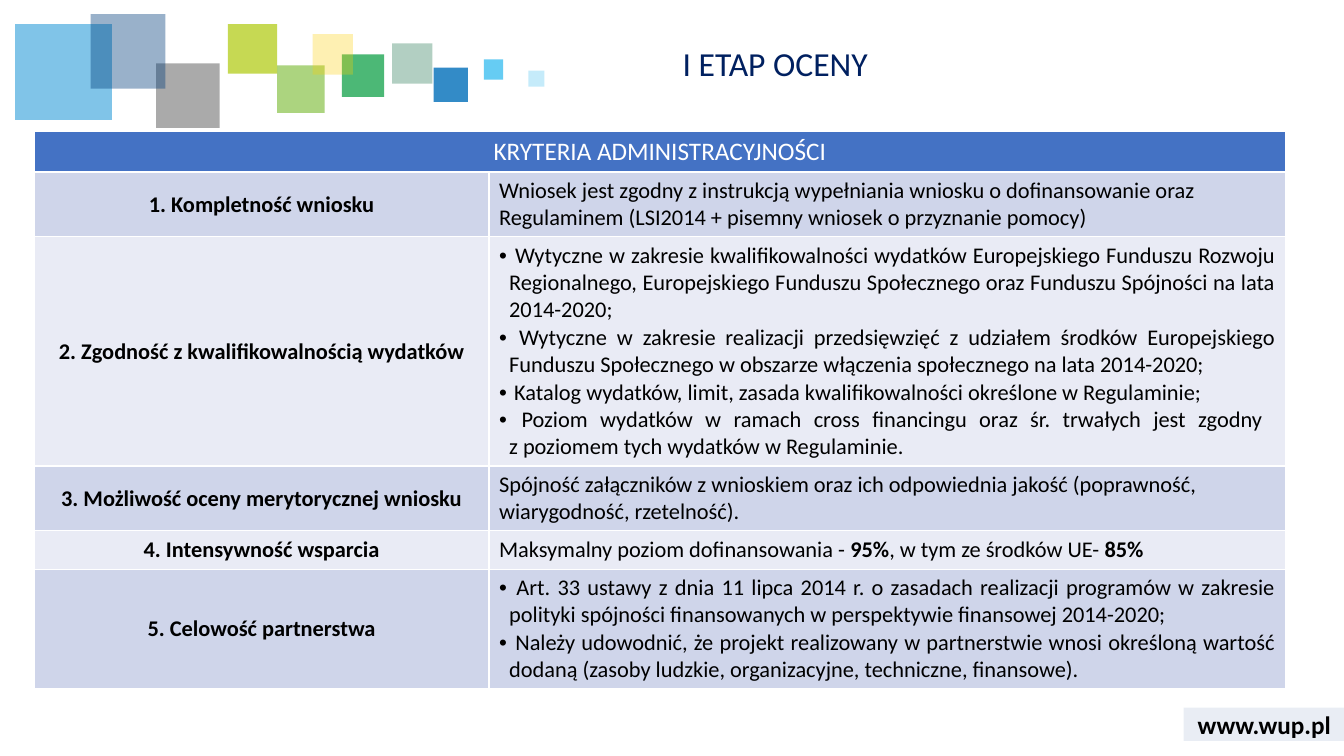
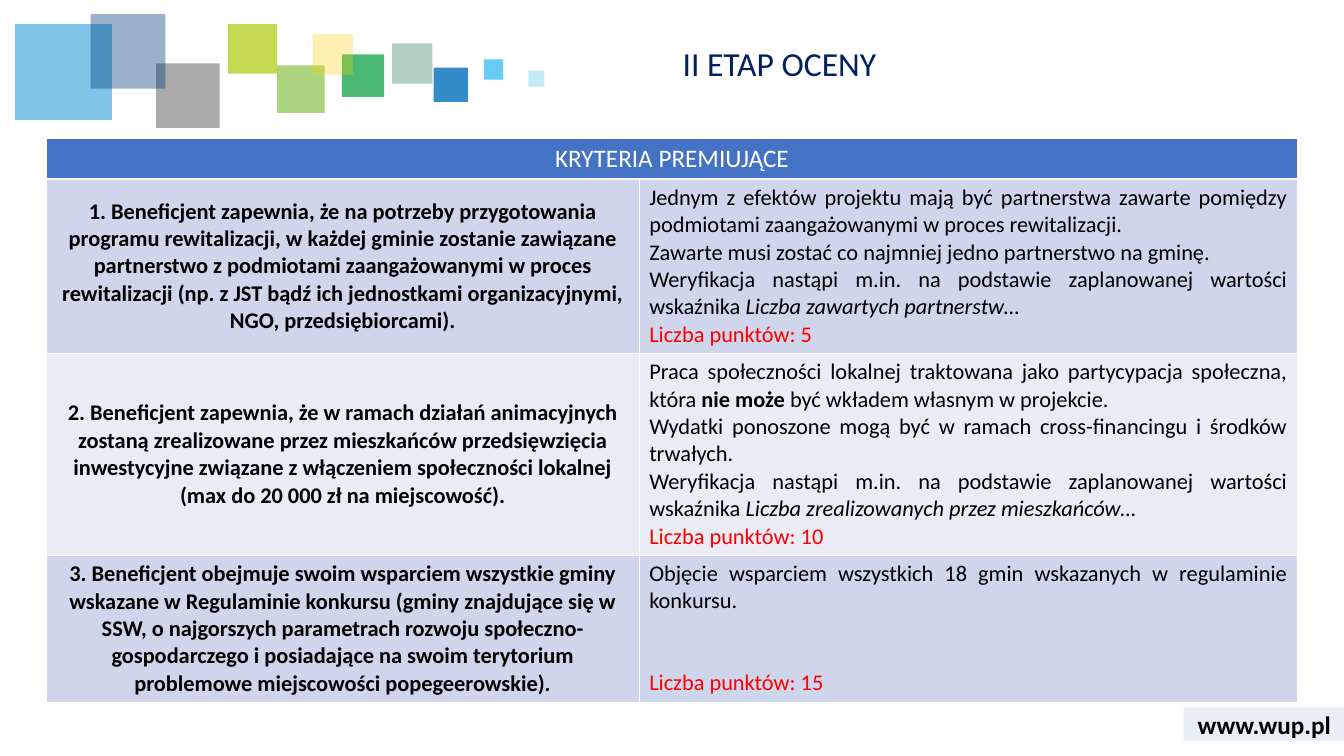
from lxml.etree import SubElement
from pptx import Presentation
from pptx.dml.color import RGBColor
from pptx.enum.shapes import MSO_SHAPE
from pptx.enum.text import MSO_ANCHOR, MSO_AUTO_SIZE, PP_ALIGN
from pptx.oxml.ns import qn
from pptx.util import Inches, Pt

MOSAIC = [
    (3.89, 0.43, 0.4, 0.4, "006138", 30),
    (4.3, 0.67, 0.34, 0.34, "006EB9", 80),
    (3.39, 0.54, 0.42, 0.42, "009A3C", 70),
    (0.15, 0.24, 0.96, 0.95, "028BD3", 50),
    (2.75, 0.65, 0.47, 0.47, "75B82A", 60),
    (1.55, 0.63, 0.63, 0.64, "575757", 50),
    (0.9, 0.14, 0.74, 0.74, "003D7C", 40),
    (4.8, 0.59, 0.19, 0.2, "40C0F1", 80),
    (2.26, 0.24, 0.49, 0.49, "AFCA0B", 70),
    (3.1, 0.34, 0.4, 0.4, "FED000", 30),
    (5.24, 0.7, 0.16, 0.16, "40C0F1", 30),
]
LEFT, CENTER, JUSTIFY = PP_ALIGN.LEFT, PP_ALIGN.CENTER, PP_ALIGN.JUSTIFY
BREAK = None


def rgb(hex_code):
    """Turn a hex string into a colour."""
    return RGBColor.from_string(hex_code)


def para(*runs, align=JUSTIFY, bullet=False, before=0):
    """Describe a paragraph made of strings, (string, style) pairs and breaks."""
    return {"runs": runs, "align": align, "bullet": bullet, "before": before}


def bullet(*runs):
    """Describe a bulleted paragraph."""
    return para(*runs, bullet=True)


def points(count, before=0):
    """Describe the red line with the score."""
    return para((f"Liczba punktów: {count}", "red"), before=before)


class Deck:
    """Holds the presentation, its style and the current slide."""

    FONT = "Calibri"
    NAVY, BLACK, WHITE, RED = "002060", "000000", "FFFFFF", "FF0000"
    HEADER, BANDS = "4472C4", ("CFD5EA", "E9EBF5")
    BODY_SIZE, HEADER_SIZE, TITLE_SIZE = 16, 18, 24

    def __init__(self):
        """Start an empty widescreen presentation."""
        self.prs = Presentation()
        self.prs.slide_width = Inches(13.33)
        self.prs.slide_height = Inches(7.5)
        self.slide = None

    def add_slide(self, title):
        """Add a slide with its title, mosaic and footer."""
        self.slide = self.prs.slides.add_slide(self.prs.slide_layouts[5])
        self.title(title)
        for square in MOSAIC:
            self.rectangle(*square)
        self.footer("www.wup.pl")

    def title(self, text):
        """Place and format the title placeholder."""
        holder = self.slide.shapes.title
        holder.left, holder.top = Inches(6.67), Inches(0.42)
        holder.width, holder.height = Inches(6.36), Inches(0.55)
        frame = holder.text_frame
        frame.auto_size = MSO_AUTO_SIZE.NONE
        frame.vertical_anchor = MSO_ANCHOR.TOP
        heading = frame.paragraphs[0]
        heading.alignment, heading.line_spacing = LEFT, 0.9
        self.text_run(heading, text, self.TITLE_SIZE, self.NAVY)

    def rectangle(self, left, top, width, height, color, opacity):
        """Draw a borderless rectangle with the given opacity in percent."""
        box = self.slide.shapes.add_shape(
            MSO_SHAPE.RECTANGLE, Inches(left), Inches(top), Inches(width), Inches(height))
        box.shadow.inherit = False
        box.line.fill.background()
        box.fill.solid()
        box.fill.fore_color.rgb = rgb(color)
        tint = box.element.spPr.find(f"{qn('a:solidFill')}/{qn('a:srgbClr')}")
        SubElement(tint, qn("a:alpha")).set("val", str(opacity * 1000))
        return box

    def footer(self, address):
        """Draw the footer band with the web address."""
        frame = self.rectangle(11.74, 7.02, 1.6, 0.33, "2F5597", 10).text_frame
        frame.margin_top = frame.margin_bottom = 0
        frame.vertical_anchor = MSO_ANCHOR.MIDDLE
        frame.paragraphs[0].alignment = CENTER
        self.text_run(frame.paragraphs[0], address, self.HEADER_SIZE, self.BLACK, bold=True)

    def text_run(self, paragraph, text, size, color, bold=False, italic=False):
        """Append a formatted run."""
        piece = paragraph.add_run()
        piece.text = text
        font = piece.font
        font.name, font.size = self.FONT, Pt(size)
        font.bold, font.italic = bold, italic
        font.color.rgb = rgb(color)

    def cell_text(self, cell, paragraphs):
        """Put body paragraphs into a cell."""
        frame = cell.text_frame
        for index, content in enumerate(paragraphs):
            paragraph = frame.add_paragraph() if index else frame.paragraphs[0]
            paragraph.alignment = content["align"]
            if content["before"]:
                paragraph.space_before = Pt(content["before"])
            if content["bullet"]:
                self.mark(paragraph)
            for part in content["runs"]:
                if part is BREAK:
                    paragraph.add_line_break()
                    continue
                text, style = (part, "") if isinstance(part, str) else part
                self.text_run(paragraph, text, self.BODY_SIZE,
                              self.RED if style == "red" else self.BLACK,
                              style == "bold", style == "italic")

    def mark(self, paragraph):
        """Give a paragraph a hanging bullet."""
        props = paragraph._p.get_or_add_pPr()
        props.set("marL", str(Inches(0.1)))
        props.set("indent", str(-Inches(0.1)))
        SubElement(props, qn("a:buFont")).set("typeface", "Arial")
        SubElement(props, qn("a:buChar")).set("char", "•")

    def fill(self, cell, color):
        """Fill a cell with one colour."""
        cell.fill.solid()
        cell.fill.fore_color.rgb = rgb(color)

    def criteria_table(self, left, top, widths, heights, heading, criteria):
        """Draw a table of criteria and their descriptions."""
        table = self.slide.shapes.add_table(
            len(heights), len(widths), Inches(left), Inches(top),
            Inches(sum(widths)), Inches(sum(heights))).table
        for column, width in zip(table.columns, widths):
            column.width = Inches(width)
        for row, height in zip(table.rows, heights):
            row.height = Inches(height)
        header = table.cell(0, 0)
        header.merge(table.cell(0, 1))
        self.fill(header, self.HEADER)
        header.text_frame.paragraphs[0].alignment = CENTER
        self.text_run(header.text_frame.paragraphs[0], heading, self.HEADER_SIZE, self.WHITE)
        for index, (names, description) in enumerate(criteria):
            criterion, details = table.cell(index + 1, 0), table.cell(index + 1, 1)
            for cell in (criterion, details):
                self.fill(cell, self.BANDS[index % 2])
            criterion.vertical_anchor = MSO_ANCHOR.MIDDLE
            self.cell_text(criterion, [para((name, "bold"), align=CENTER) for name in names])
            self.cell_text(details, description)


ADMINISTRATIVE = [
    (["1. Kompletność wniosku"], [
        para("Wniosek jest zgodny z instrukcją wypełniania wniosku o dofinansowanie "
             "oraz Regulaminem (LSI2014 + pisemny wniosek o przyznanie pomocy)", align=LEFT)]),
    (["2. Zgodność z kwalifikowalnością wydatków"], [
        bullet(" Wytyczne w zakresie kwalifikowalności wydatków Europejskiego Funduszu Rozwoju "
               "Regionalnego, Europejskiego Funduszu Społecznego oraz Funduszu Spójności "
               "na lata 2014-2020;"),
        bullet(" Wytyczne w zakresie realizacji przedsięwzięć z udziałem środków Europejskiego "
               "Funduszu Społecznego w obszarze włączenia społecznego na lata 2014-2020;"),
        bullet(" Katalog wydatków, limit, zasada kwalifikowalności określone w Regulaminie;"),
        bullet(" Poziom wydatków w ramach cross financingu oraz śr. trwałych jest zgodny ",
               BREAK, "z poziomem tych wydatków w Regulaminie.")]),
    (["3. Możliwość oceny merytorycznej wniosku"], [
        para("Spójność załączników z wnioskiem oraz ich odpowiednia jakość (poprawność, "
             "wiarygodność, rzetelność).", align=LEFT)]),
    (["4. Intensywność wsparcia"], [
        para("Maksymalny poziom dofinansowania - ", ("95%", "bold"),
             ", w tym ze środków UE- ", ("85%", "bold"))]),
    (["5. Celowość partnerstwa"], [
        bullet(" Art. 33 ustawy z dnia 11 lipca 2014 r. o zasadach realizacji programów w zakresie "
               "polityki spójności finansowanych w perspektywie finansowej 2014-2020;"),
        bullet(" Należy udowodnić, że projekt realizowany w partnerstwie wnosi określoną wartość "
               "dodaną (zasoby ludzkie, organizacyjne, techniczne, finansowe).")]),
]
VERIFICATION = "Weryfikacja nastąpi m.in. na podstawie zaplanowanej wartości wskaźnika "
BONUS = [
    (["1. Beneficjent zapewnia, że na potrzeby przygotowania programu rewitalizacji, w każdej "
      "gminie zostanie zawiązane partnerstwo z podmiotami zaangażowanymi w proces "
      "rewitalizacji (np. z JST bądź ich jednostkami organizacyjnymi, NGO, "
      "przedsiębiorcami)."], [
        para("Jednym z efektów projektu mają być partnerstwa zawarte pomiędzy podmiotami "
             "zaangażowanymi w proces rewitalizacji."),
        para("Zawarte musi zostać co najmniej jedno partnerstwo na gminę."),
        para(VERIFICATION, ("Liczba zawartych partnerstw…", "italic")),
        points(5)]),
    (["2. Beneficjent zapewnia, że w ramach działań animacyjnych zostaną zrealizowane przez "
      "mieszkańców przedsięwzięcia inwestycyjne związane z włączeniem społeczności lokalnej",
      "(max do 20 000 zł na miejscowość)."], [
        para("Praca społeczności lokalnej traktowana jako partycypacja społeczna, która ",
             ("nie może ", "bold"), "być wkładem własnym w projekcie."),
        para("Wydatki ponoszone mogą być w ramach cross-financingu i środków trwałych."),
        para(VERIFICATION, ("Liczba zrealizowanych przez mieszkańców…", "italic")),
        points(10)]),
    (["3. Beneficjent obejmuje swoim wsparciem wszystkie gminy wskazane w Regulaminie konkursu "
      "(gminy znajdujące się w SSW, o najgorszych parametrach rozwoju "
      "społeczno-gospodarczego i posiadające na swoim terytorium problemowe miejscowości "
      "popegeerowskie)."], [
        para("Objęcie wsparciem wszystkich 18 gmin wskazanych w regulaminie konkursu."),
        points(15, before=39)]),
]


def main():
    """Build both slides and save the file."""
    deck = Deck()
    deck.add_slide("I ETAP OCENY")
    deck.criteria_table(0.34, 1.3, (4.51, 7.9), (0.4, 0.64, 2.27, 0.64, 0.38, 1.18),
                        "KRYTERIA ADMINISTRACYJNOŚCI", ADMINISTRATIVE)
    deck.add_slide("II ETAP OCENY")
    deck.criteria_table(0.46, 1.37, (5.88, 6.53), (0.4, 1.73, 2, 1.45),
                        "KRYTERIA PREMIUJĄCE", BONUS)
    deck.prs.save("out.pptx")


if __name__ == "__main__":
    main()
